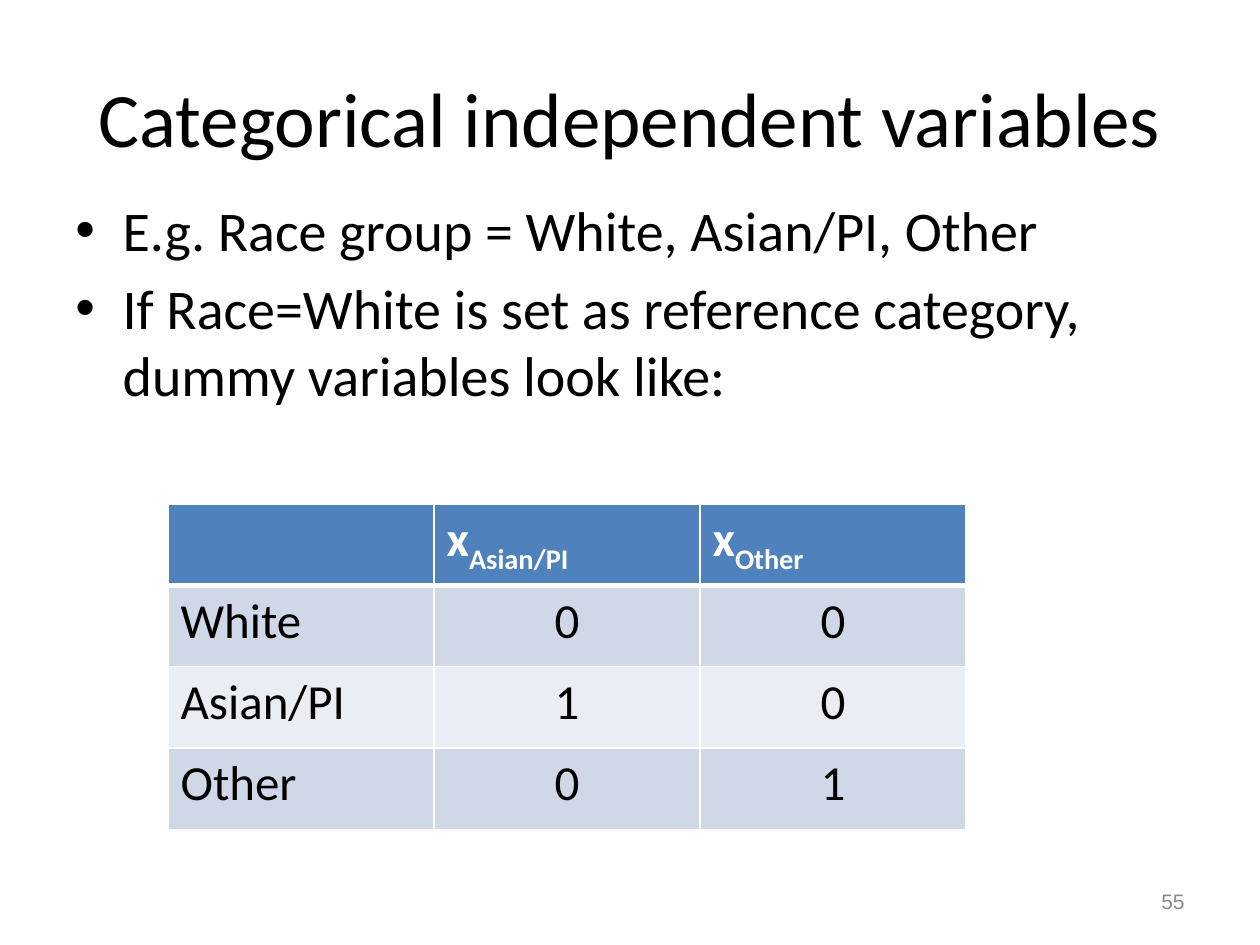
"""Build a slide on dummy coding of categorical independent variables."""
from lxml.etree import SubElement
from pptx import Presentation
from pptx.dml.color import RGBColor
from pptx.enum.text import MSO_ANCHOR, PP_ALIGN
from pptx.oxml.ns import qn
from pptx.util import Pt

BLACK = RGBColor(0x00, 0x00, 0x00)
WHITE = RGBColor(0xFF, 0xFF, 0xFF)
GREY = RGBColor(0x89, 0x89, 0x89)
HEADER_BLUE = RGBColor(0x4F, 0x81, 0xBD)
BAND_DARK = RGBColor(0xD0, 0xD8, 0xE8)
BAND_LIGHT = RGBColor(0xE9, 0xED, 0xF4)


class SlideBuilder:
    """Hold the text style and the current slide."""

    font_name = "Calibri"

    def __init__(self, slide):
        self.slide = slide

    def format_runs(self, paragraph, size, color=BLACK, bold=False, font_name=None):
        """Apply one font to every run of a paragraph."""
        for run in paragraph.runs:
            run.font.name = font_name or self.font_name
            run.font.size = Pt(size)
            run.font.bold = bold
            run.font.color.rgb = color

    def add_text(self, text, box, size, alignment=PP_ALIGN.LEFT,
                 anchor=MSO_ANCHOR.TOP, color=BLACK, font_name=None):
        """Add a wrapped text box and return its text frame."""
        shape = self.slide.shapes.add_textbox(*map(Pt, box))
        text_frame = shape.text_frame
        text_frame.word_wrap = True
        text_frame.vertical_anchor = anchor
        text_frame.text = text
        for paragraph in text_frame.paragraphs:
            paragraph.alignment = alignment
            self.format_runs(paragraph, size, color, font_name=font_name)
        return text_frame

    def add_bullets(self, items, box, size, indent):
        """Add a bulleted list with a hanging indent."""
        text_frame = self.add_text("\n".join(items), box, size)
        for paragraph in text_frame.paragraphs:
            paragraph.space_before = Pt(0.2 * size)
            properties = paragraph._p.get_or_add_pPr()
            properties.set("marL", str(Pt(indent)))
            properties.set("indent", str(-Pt(indent)))
            SubElement(properties, qn("a:buFont"), typeface="Arial")
            SubElement(properties, qn("a:buChar"), char="•")

    def set_borders(self, cell, top, bottom):
        """Draw white borders around a cell."""
        properties = cell._tc.get_or_add_tcPr()
        for side, width in (("L", 1), ("R", 1), ("T", top), ("B", bottom)):
            line = SubElement(properties, qn(f"a:ln{side}"), w=str(Pt(width)))
            fill = SubElement(line, qn("a:solidFill"))
            SubElement(fill, qn("a:srgbClr"), val=str(WHITE))

    def add_table(self, subscripts, rows, box, size):
        """Add a banded table whose header shows subscripted variables."""
        row_count, column_count = len(rows) + 1, len(subscripts) + 1
        table = self.slide.shapes.add_table(row_count, column_count, *map(Pt, box)).table
        for column, subscript in enumerate(subscripts, 1):
            paragraph = table.cell(0, column).text_frame.paragraphs[0]
            paragraph.text = "x"
            run = paragraph.add_run()
            run.text = subscript
            run._r.get_or_add_rPr().set("baseline", "-25000")
            self.format_runs(paragraph, size, WHITE, bold=True)
        for row, values in enumerate(rows, 1):
            for column, value in enumerate(values):
                paragraph = table.cell(row, column).text_frame.paragraphs[0]
                paragraph.text = value
                paragraph.alignment = PP_ALIGN.CENTER if column else PP_ALIGN.LEFT
                self.format_runs(paragraph, size)
        for row in range(row_count):
            band = BAND_DARK if row % 2 else BAND_LIGHT
            for column in range(column_count):
                cell = table.cell(row, column)
                self.set_borders(cell, 3 if row == 1 else 1, 3 if row == 0 else 1)
                cell.fill.solid()
                cell.fill.fore_color.rgb = band if row else HEADER_BLUE


def main():
    """Build and save the slide."""
    presentation = Presentation()
    presentation.slide_width, presentation.slide_height = Pt(720), Pt(540)
    slide = presentation.slides.add_slide(presentation.slide_layouts[6])
    builder = SlideBuilder(slide)
    builder.add_text("Categorical independent variables", (36, 21.6, 648, 90), 44,
                     PP_ALIGN.CENTER, MSO_ANCHOR.MIDDLE)
    builder.add_bullets(
        ["E.g. Race group = White, Asian/PI, Other",
         "If Race=White is set as reference category, dummy variables look like:"],
        (36, 108, 648, 402), 32, 27)
    builder.add_text("55", (516, 500.5, 168, 28.75), 12, PP_ALIGN.RIGHT,
                     MSO_ANCHOR.MIDDLE, GREY, "Arial")
    builder.add_table(
        ["Asian/PI", "Other"],
        [("White", "0", "0"), ("Asian/PI", "1", "0"), ("Other", "0", "1")],
        (96, 288, 456, 186), 28)
    presentation.save("out.pptx")


if __name__ == "__main__":
    main()
